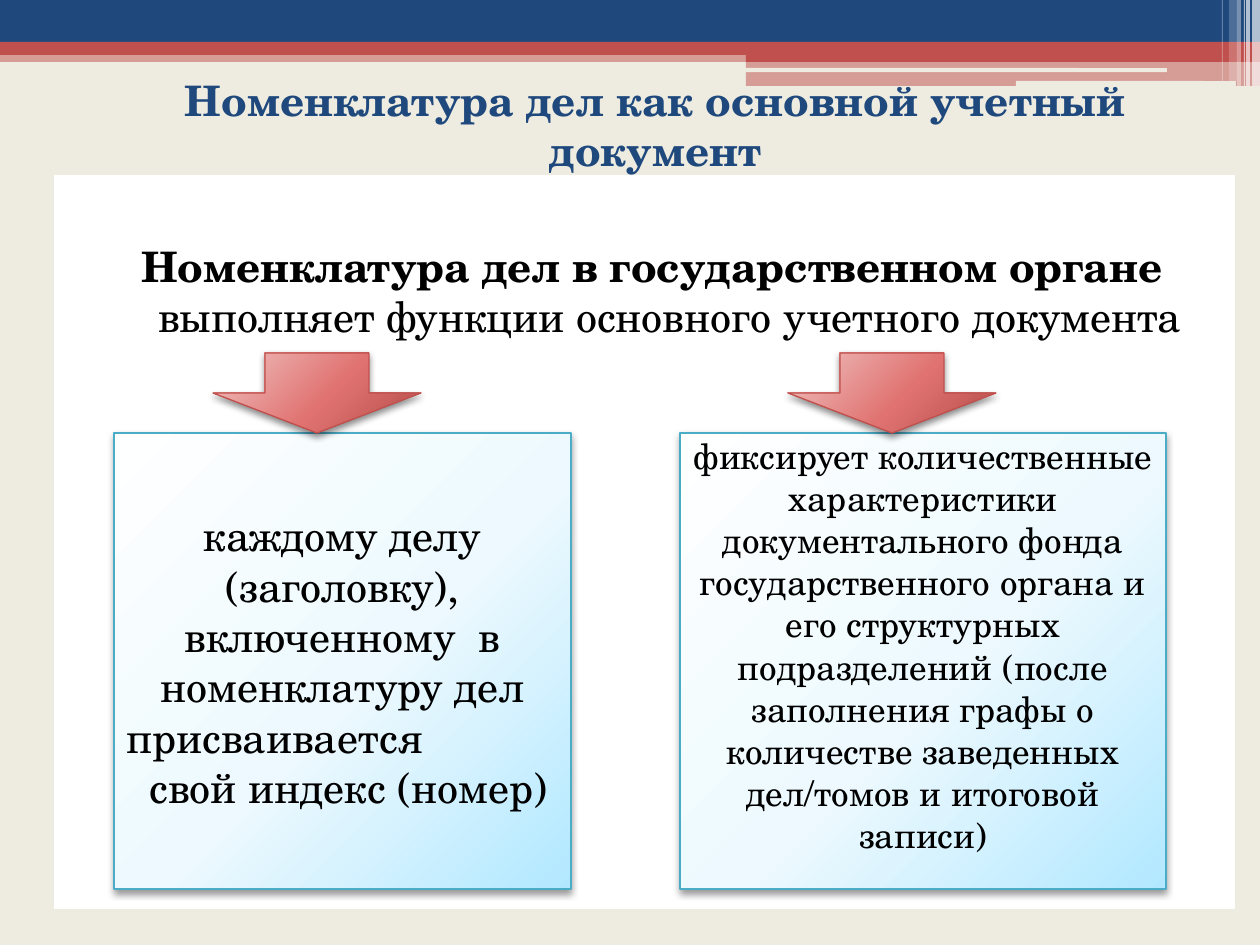
"""Builds the slide on the file register as the main record document."""
from lxml import etree
from pptx import Presentation
from pptx import util as u
from pptx.dml.color import RGBColor
from pptx.enum import shapes, text
from pptx.oxml import parse_xml
from pptx.oxml.ns import nsdecls, qn

PX = 914400 / 126
FONT = "TeX Gyre Schola"
HUES = {
    "navy": "1F497D", "red": "C0504D", "sand": "EEECE1",
    "white": "FFFFFF", "black": "000000", "teal": "4BACC6",
}
SKY = ["FEFFFF", "EDF9FE", "B2E8FF"]
ROSE = ["EFC4C3", "E07371", "B34B48"]
RECT = shapes.MSO_SHAPE.RECTANGLE
PILL = shapes.MSO_SHAPE.ROUNDED_RECTANGLE
DOWN = shapes.MSO_SHAPE.DOWN_ARROW
LEFT, MID = text.PP_ALIGN.LEFT, text.PP_ALIGN.CENTER

deck = Presentation()
deck.slide_width, deck.slide_height = u.Inches(10), u.Inches(7.5)
page = deck.slides.add_slide(deck.slide_layouts[6])
page.background.fill.solid()
page.background.fill.fore_color.rgb = RGBColor.from_string(HUES["sand"])


def block(kind, spot, hue, alpha=100):
    item = page.shapes.add_shape(kind, *[round(n * PX) for n in spot])
    item.shadow.inherit = False
    item.line.fill.background()
    item.fill.solid()
    item.fill.fore_color.rgb = RGBColor.from_string(HUES[hue])
    if alpha < 100:
        tint = next(item.fill._xPr.iter(qn("a:srgbClr")))
        etree.SubElement(tint, qn("a:alpha"), val=str(alpha * 1000))
    return item


def glossy(kind, spot, stops, edge, alpha):
    item = block(kind, spot, edge)
    item.line.color.rgb = RGBColor.from_string(HUES[edge])
    item.line.width = u.Pt(0.75)
    props = item.fill._xPr
    marks = "".join(
        f'<a:gs pos="{pos}000"><a:srgbClr val="{hue}"/></a:gs>'
        for pos, hue in zip((0, 55, 100), stops))
    props.replace(props.find(qn("a:solidFill")), parse_xml(
        f'<a:gradFill {nsdecls("a")} rotWithShape="1"><a:gsLst>{marks}</a:gsLst>'
        '<a:path path="circle"><a:fillToRect l="-40000" t="-90000" '
        'r="140000" b="190000"/></a:path></a:gradFill>'))
    props.find(qn("a:effectLst")).append(parse_xml(
        f'<a:outerShdw {nsdecls("a")} blurRad="51000" dist="25400" dir="5400000" '
        f'rotWithShape="0"><a:srgbClr val="000000"><a:alpha val="{alpha}000"/>'
        '</a:srgbClr></a:outerShdw>'))
    return item


bands = [
    (RECT, (0, 50, 1260, 12), "red", 50),
    (RECT, (0, 0, 1260, 43), "navy", 100),
    (RECT, (0, 42, 1260, 13), "red", 100),
    (RECT, (746, 49, 514, 13), "red", 100),
    (RECT, (746, 61, 514, 25), "red", 50),
    (PILL, (745, 68, 422, 4), "sand", 100),
    (PILL, (1016, 81, 220, 5), "sand", 100),
]
for band in bands:
    block(*band)
for x, wide, tall, alpha in [
    (1252, 8, 86, 65), (1246, 4, 86, 65), (1244, 1, 86, 60),
    (1237, 4, 86, 40), (1229, 8, 81, 20), (1222, 1, 81, 30),
]:
    block(RECT, (x, 0, wide, tall), "white", alpha)

title = page.shapes.add_textbox(*[round(n * PX) for n in (84, 55, 1143, 139)])
body = block(RECT, (54, 175, 1181, 734), "white")
index = glossy(RECT, (114, 433, 457, 456), SKY, "teal", 40)
count = glossy(RECT, (680, 433, 486, 456), SKY, "teal", 40)
for x in (213, 788):
    glossy(DOWN, (x, 353, 208, 80), ROSE, "red", 45)

top, mid = text.MSO_ANCHOR.TOP, text.MSO_ANCHOR.MIDDLE
copy = [
    (title, {"vertical_anchor": mid}, 24, "navy", [
        (MID, 0, [("Номенклатура дел как основной учетный документ", True)])]),
    (body, {"vertical_anchor": top, "margin_top": round(65 * PX)}, 24, "black", [
        (MID, 0, [("Номенклатура дел в государственном органе ", True),
                  ("выполняет функции основного учетного документа", False)])]),
    (index, {"vertical_anchor": mid}, 24, "black", [
        (MID, 0, [("каждому делу (заголовку), включенному  в номенклатуру дел", False)]),
        (LEFT, 0, [("присваивается", False)]),
        (MID, 12, [("свой индекс (номер)", False)])]),
    (count, {"vertical_anchor": mid, "margin_top": 0,
             "margin_bottom": round(32 * PX)}, 20, "black", [
        (MID, 0, [("фиксирует количественные характеристики документального фонда "
                   "государственного органа и его структурных подразделений (после "
                   "заполнения графы о количестве заведенных дел/томов и итоговой "
                   "записи)", False)])]),
]
for item, look, size, hue, paras in copy:
    frame = item.text_frame
    for name, value in {"word_wrap": True, **look}.items():
        setattr(frame, name, value)
    for n, (align, inset, runs) in enumerate(paras):
        para = frame.paragraphs[0] if n == 0 else frame.add_paragraph()
        para.alignment = align
        if inset:
            para._p.get_or_add_pPr().set("marL", str(round(inset * PX)))
        for words, bold in runs:
            run = para.add_run()
            run.text = words
            style = {"name": FONT, "size": u.Pt(size), "bold": bold}
            for name, value in style.items():
                setattr(run.font, name, value)
            run.font.color.rgb = RGBColor.from_string(HUES[hue])

hang = body.text_frame.paragraphs[0]._p.get_or_add_pPr()
for name, value in {"marL": 50, "indent": -35}.items():
    hang.set(name, str(round(value * PX)))

deck.save("out.pptx")
